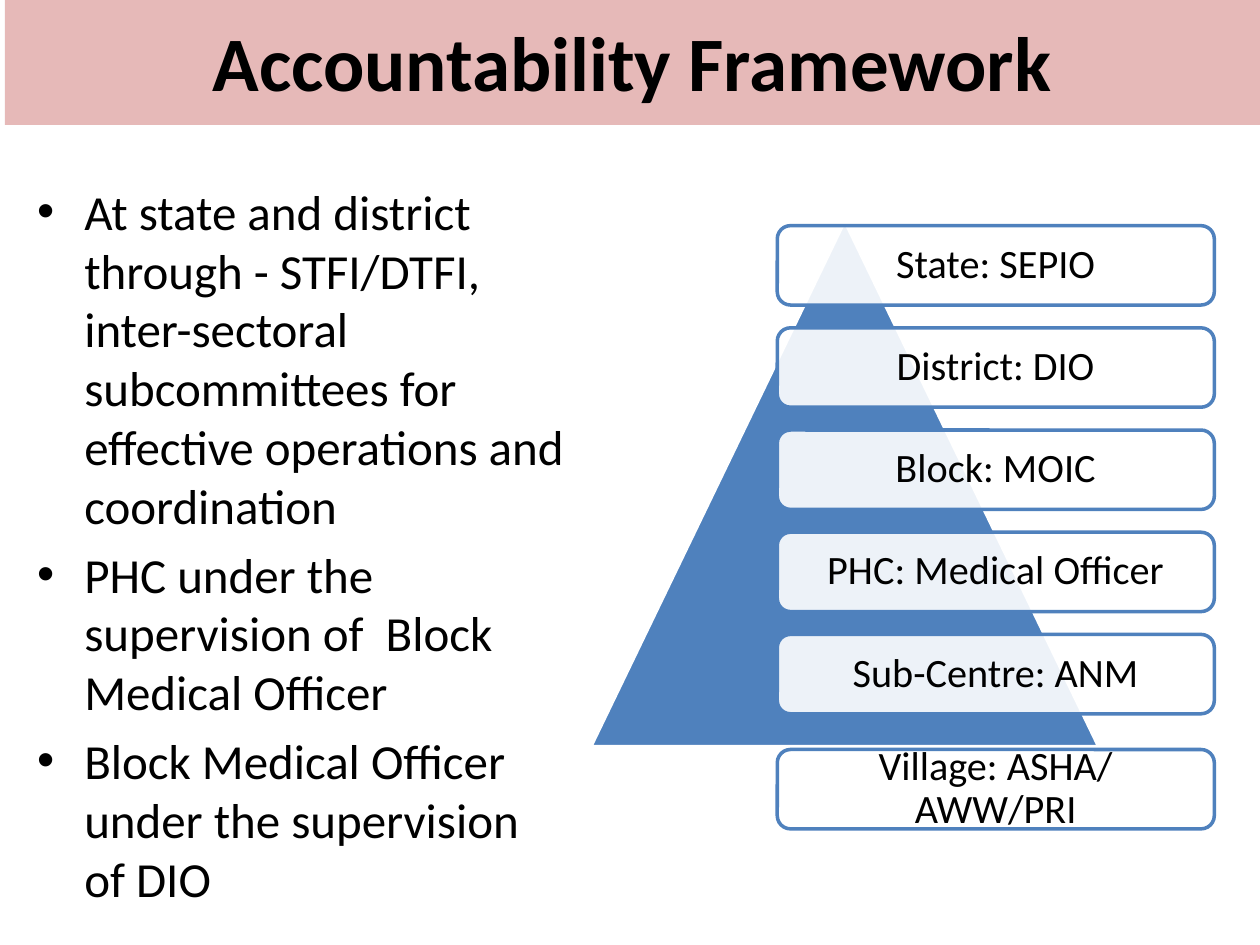
from lxml import etree
from pptx import Presentation
from pptx.dml.color import RGBColor
from pptx.enum.shapes import MSO_SHAPE
from pptx.enum.text import MSO_ANCHOR, PP_ALIGN
from pptx.oxml.ns import qn
from pptx.util import Cm, Pt

RECTANGLE = MSO_SHAPE.RECTANGLE
ROUNDED = MSO_SHAPE.ROUNDED_RECTANGLE
TRIANGLE = MSO_SHAPE.ISOSCELES_TRIANGLE
MIDDLE, TOP = MSO_ANCHOR.MIDDLE, MSO_ANCHOR.TOP
CENTER, LEFT = PP_ALIGN.CENTER, PP_ALIGN.LEFT

DUTIES = [
    "At state and district through - STFI/DTFI, inter-sectoral subcommittees for effective operations and coordination",
    "PHC under the supervision of  Block Medical Officer",
    "Block Medical Officer under the supervision of DIO",
]
LEVELS = [
    "State: SEPIO",
    "District: DIO",
    "Block: MOIC",
    "PHC: Medical Officer",
    "Sub-Centre: ANM",
    "Village: ASHA/ AWW/PRI",
]
FIRST_LEVEL_TOP, LEVEL_PITCH, VILLAGE_TOP = 4.55, 2.06, 15.11


def color(value):
    return RGBColor.from_string(value)


class SlideBuilder:
    font = "Calibri"
    ink = "000000"
    blue = "4F81BD"
    white = "FFFFFF"
    banner = "E6B9B8"

    def __init__(self, slide):
        self.slide = slide

    def style_text(self, shape, size, align, anchor, bold=False):
        frame = shape.text_frame
        frame.word_wrap = True
        frame.vertical_anchor = anchor
        for paragraph in frame.paragraphs:
            paragraph.alignment = align
            for run in paragraph.runs:
                run.font.name = self.font
                run.font.size = Pt(size)
                run.font.bold = bold
                run.font.color.rgb = color(self.ink)

    def add_shape(self, kind, box, fill, line=None):
        shape = self.slide.shapes.add_shape(kind, *map(Cm, box))
        shape.shadow.inherit = False
        shape.fill.solid()
        shape.fill.fore_color.rgb = color(fill)
        if line:
            shape.line.color.rgb = color(line)
            shape.line.width = Pt(2)
        else:
            shape.line.fill.background()
        return shape

    def add_title(self, text, box):
        shape = self.add_shape(RECTANGLE, box, self.banner)
        shape.text_frame.text = text
        self.style_text(shape, 44, CENTER, MIDDLE, bold=True)

    def add_bullets(self, items, box):
        shape = self.slide.shapes.add_textbox(*map(Cm, box))
        shape.text_frame.text = "\n".join(items)
        self.style_text(shape, 28, LEFT, TOP)
        for paragraph in shape.text_frame.paragraphs:
            paragraph.space_before = Pt(5.6)
            properties = paragraph._p.get_or_add_pPr()
            properties.set("marL", str(Cm(0.95)))
            properties.set("indent", str(-Cm(0.95)))
            etree.SubElement(properties, qn("a:buFont")).set("typeface", "Arial")
            etree.SubElement(properties, qn("a:buChar")).set("char", "•")

    def add_pyramid(self, box):
        self.add_shape(TRIANGLE, box, self.blue, self.white)

    def add_level(self, text, top):
        shape = self.add_shape(ROUNDED, (15.67, top, 8.81, 1.6), self.white, self.blue)
        fill_color = shape.fill._xPr.find(qn("a:solidFill"))[0]
        etree.SubElement(fill_color, qn("a:alpha")).set("val", "90000")
        frame = shape.text_frame
        frame.text = text
        frame.margin_left = frame.margin_right = Cm(0.25)
        frame.margin_top = frame.margin_bottom = Cm(0.25)
        self.style_text(shape, 23, CENTER, MIDDLE)
        frame.paragraphs[0].line_spacing = 0.9


def main():
    presentation = Presentation()
    presentation.slide_width, presentation.slide_height = Cm(25.4), Cm(19.05)
    slide = presentation.slides.add_slide(presentation.slide_layouts[6])
    builder = SlideBuilder(slide)
    builder.add_title("Accountability Framework", (0.1, -0.08, 25.3, 2.6))
    builder.add_bullets(DUTIES, (0.5, 3.53, 11.2, 13.56))
    builder.add_pyramid((11.91, 4.45, 10.24, 10.6))
    for index, level in enumerate(LEVELS[:-1]):
        builder.add_level(level, FIRST_LEVEL_TOP + index * LEVEL_PITCH)
    builder.add_level(LEVELS[-1], VILLAGE_TOP)
    presentation.save("out.pptx")


if __name__ == "__main__":
    main()
